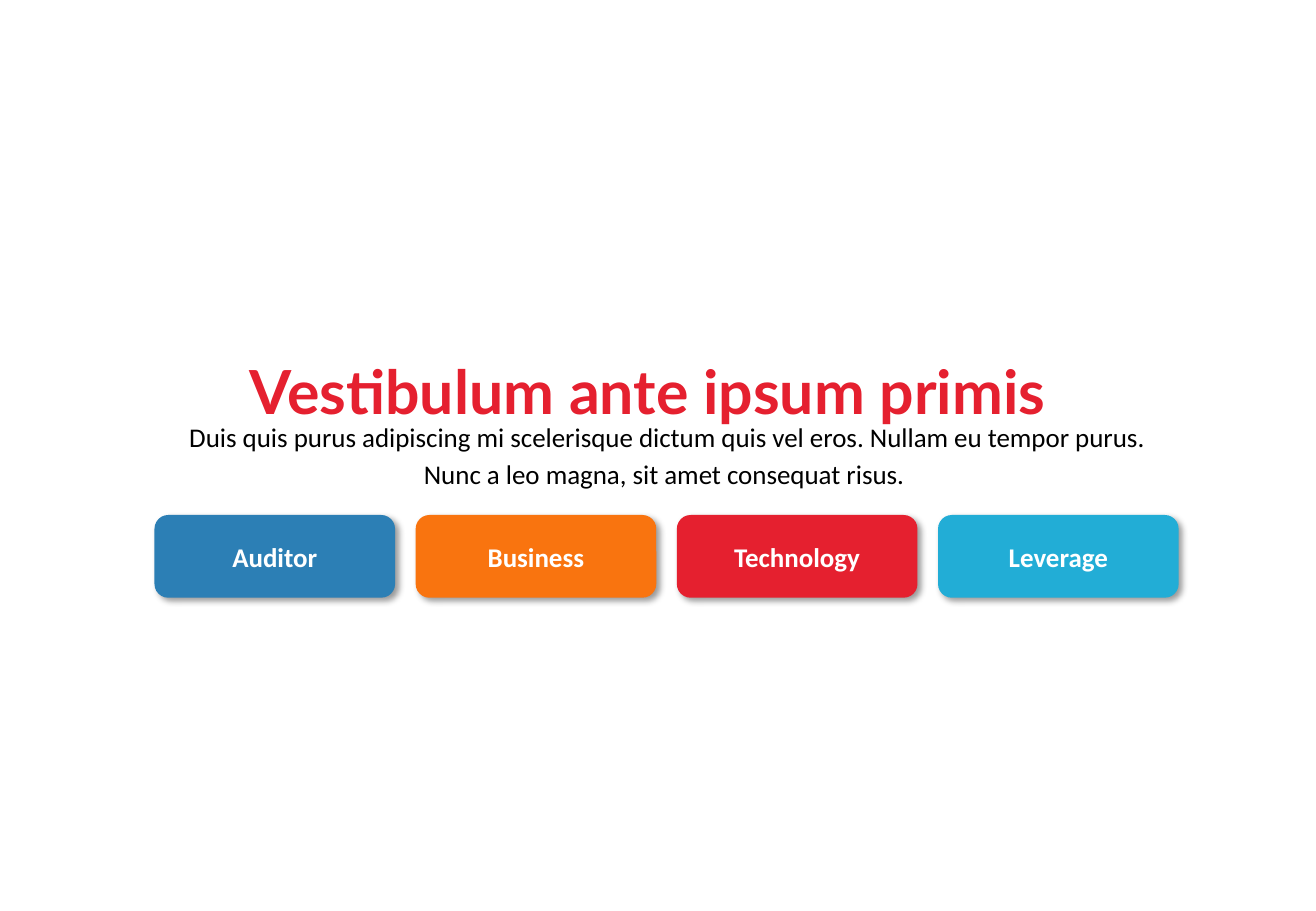
from typing import NamedTuple

from lxml.etree import SubElement
from pptx import Presentation
from pptx.dml.color import RGBColor
from pptx.enum.shapes import MSO_SHAPE
from pptx.enum.text import MSO_ANCHOR, MSO_AUTO_SIZE, PP_ALIGN
from pptx.oxml.ns import qn
from pptx.shapes.autoshape import Shape
from pptx.slide import Slide
from pptx.util import Cm, Pt

BLUE = RGBColor(0x2C, 0x7F, 0xB5)
ORANGE = RGBColor(0xF9, 0x74, 0x0F)
RED = RGBColor(0xE5, 0x20, 0x2F)
CYAN = RGBColor(0x22, 0xAD, 0xD6)
WHITE = RGBColor(0xFF, 0xFF, 0xFF)
BLACK = RGBColor(0, 0, 0)

LEFT, TOP, PITCH = 3.23, 10.77, 5.46
WIDTH, HEIGHT = 5.03, 1.73


class Card(NamedTuple):
    """A labelled coloured button."""
    label: str
    fill: RGBColor


class Style(NamedTuple):
    """The look of a line of text."""
    font: str
    size: int
    color: RGBColor
    bold: bool = False


CARDS = [
    Card("Auditor", BLUE),
    Card("Business", ORANGE),
    Card("Technology", RED),
    Card("Leverage", CYAN),
]
HEAD = Style("Lato", 36, RED, True)
BODY = Style("Calibri", 16, BLACK)
LABEL = Style("Calibri", 16, WHITE, True)


def place(shape: Shape, left: float, top: float, width: float, height: float) -> None:
    """Set the position and size of a shape in centimetres."""
    shape.left, shape.top = Cm(left), Cm(top)
    shape.width, shape.height = Cm(width), Cm(height)


def write(shape: Shape, text: str, style: Style, anchor: MSO_ANCHOR) -> None:
    """Fill a shape with centred, styled text."""
    frame = shape.text_frame
    frame.text = text
    frame.word_wrap = True
    frame.vertical_anchor = anchor
    line = frame.paragraphs[0]
    line.alignment = PP_ALIGN.CENTER
    font = line.runs[0].font
    font.name, font.size, font.bold = style.font, Pt(style.size), style.bold
    font.color.rgb = style.color


def space(shape: Shape) -> None:
    """Open up the lines of a text block and let it grow."""
    shape.text_frame.auto_size = MSO_AUTO_SIZE.SHAPE_TO_FIT_TEXT
    line = shape.text_frame.paragraphs[0]
    line.line_spacing = 1.15
    line.space_before, line.space_after = Pt(0), Pt(8.1)


def shade(shape: Shape) -> None:
    """Give a shape a soft shadow to the lower right."""
    shape.shadow.inherit = False
    effects = shape._element.spPr.find(qn("a:effectLst"))
    outer = SubElement(effects, qn("a:outerShdw"), blurRad=str(Pt(4)),
                       dist=str(Pt(3)), dir="2700000", algn="tl", rotWithShape="0")
    color = SubElement(outer, qn("a:srgbClr"), val=str(BLACK))
    SubElement(color, qn("a:alpha"), val="40000")


def draw(slide: Slide, card: Card, left: float) -> None:
    """Draw one card at the given left edge."""
    shape = slide.shapes.add_shape(
        MSO_SHAPE.ROUNDED_RECTANGLE, Cm(left), Cm(TOP), Cm(WIDTH), Cm(HEIGHT))
    shape.fill.solid()
    shape.fill.fore_color.rgb = card.fill
    shape.line.fill.background()
    shade(shape)
    write(shape, card.label, LABEL, MSO_ANCHOR.MIDDLE)


def main() -> None:
    """Build and save the slide."""
    deck = Presentation()
    deck.slide_width, deck.slide_height = Cm(27.51), Cm(19.05)
    slide = deck.slides.add_slide(deck.slide_layouts[5])

    for index, card in enumerate(CARDS):
        draw(slide, card, LEFT + index * PITCH)

    intro = slide.shapes.add_textbox(Cm(3.56), Cm(8.56), Cm(20.78), Cm(1.78))
    write(intro, "Duis quis purus adipiscing mi scelerisque dictum quis vel eros. "
          "Nullam eu tempor purus. Nunc a leo magna, sit amet consequat risus. ",
          BODY, MSO_ANCHOR.TOP)
    space(intro)

    title = slide.shapes.title
    place(title, 2.77, 7.04, 21.54, 1.88)
    write(title, "Vestibulum ante ipsum primis", HEAD, MSO_ANCHOR.TOP)
    space(title)

    deck.save("out.pptx")


if __name__ == "__main__":
    main()
